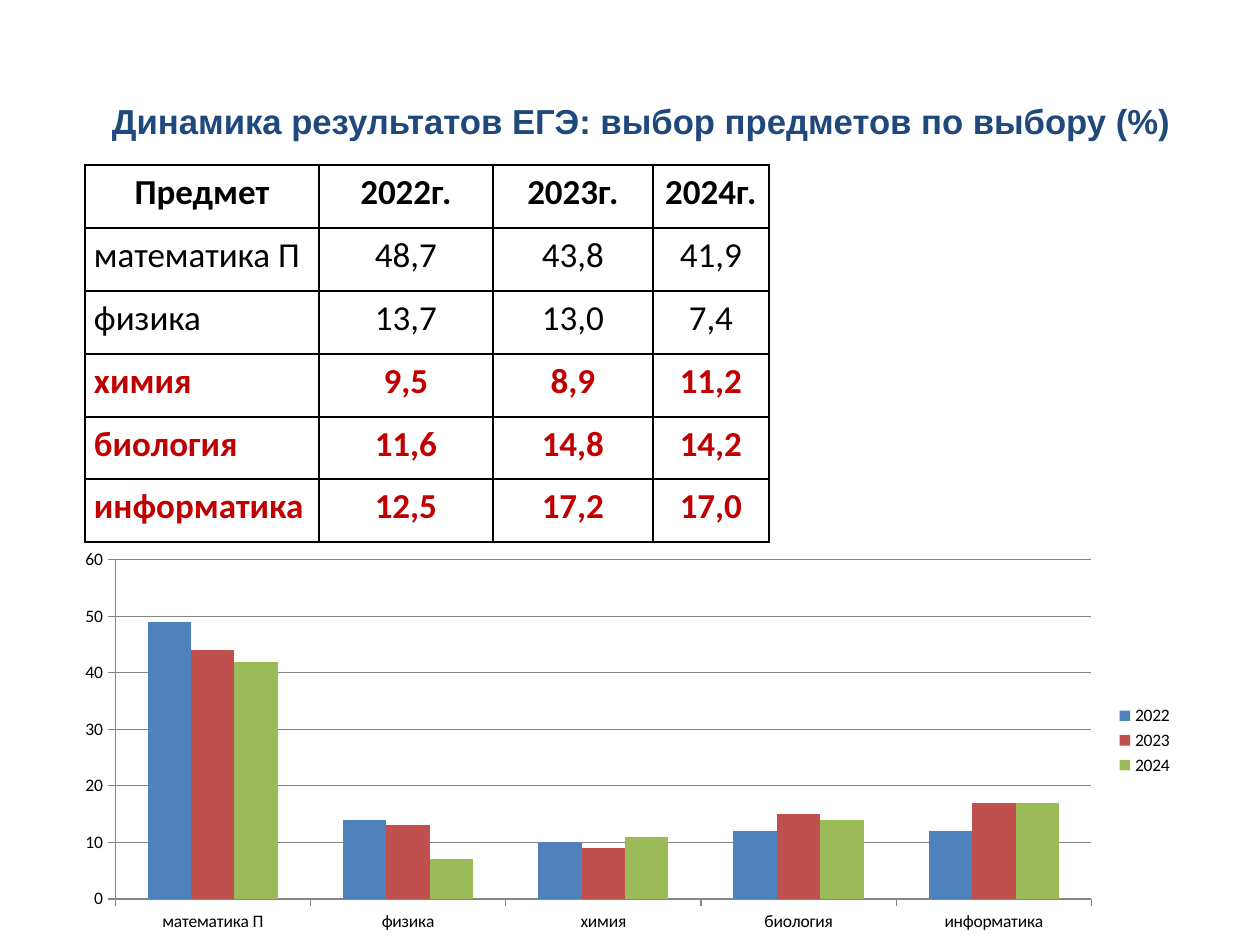
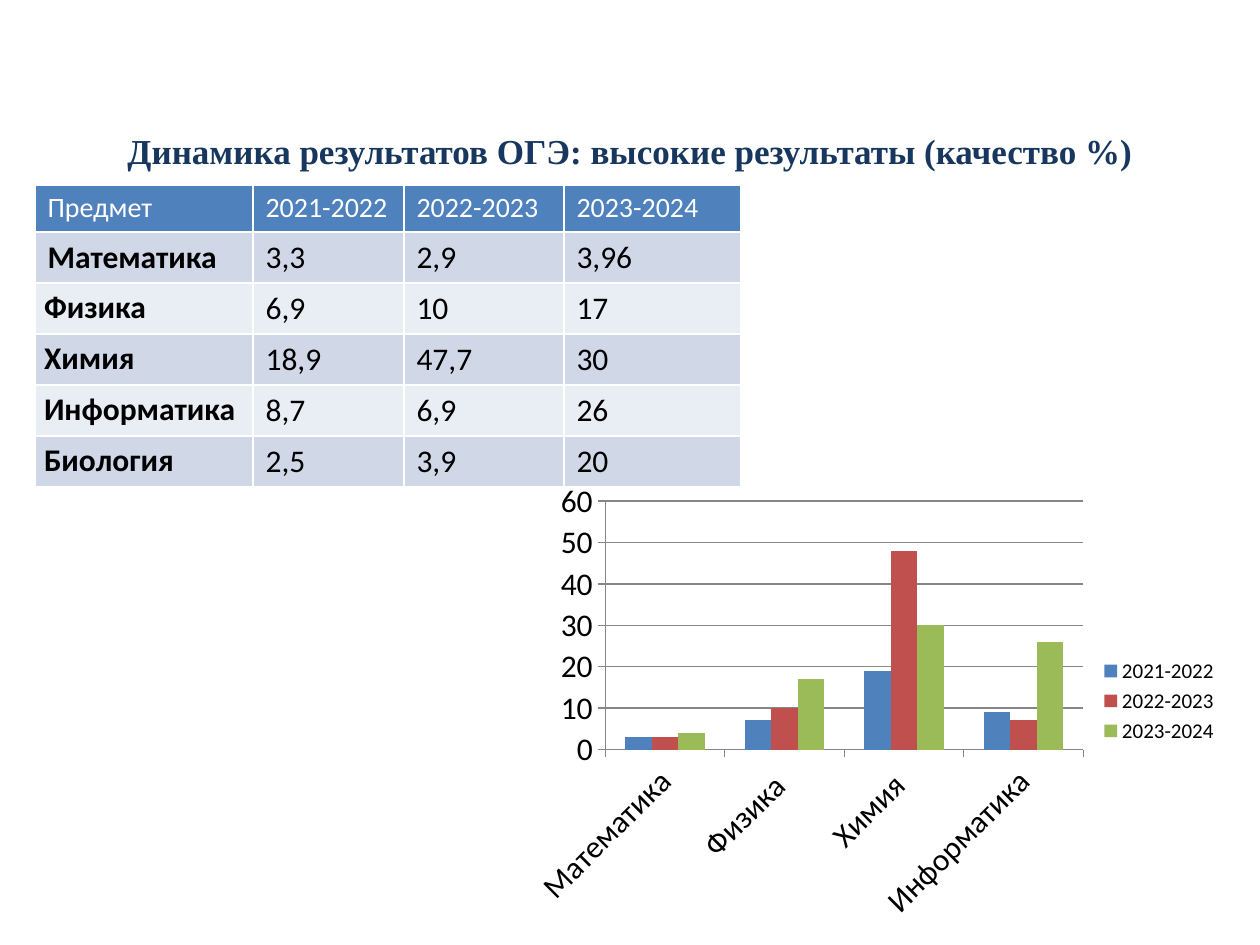
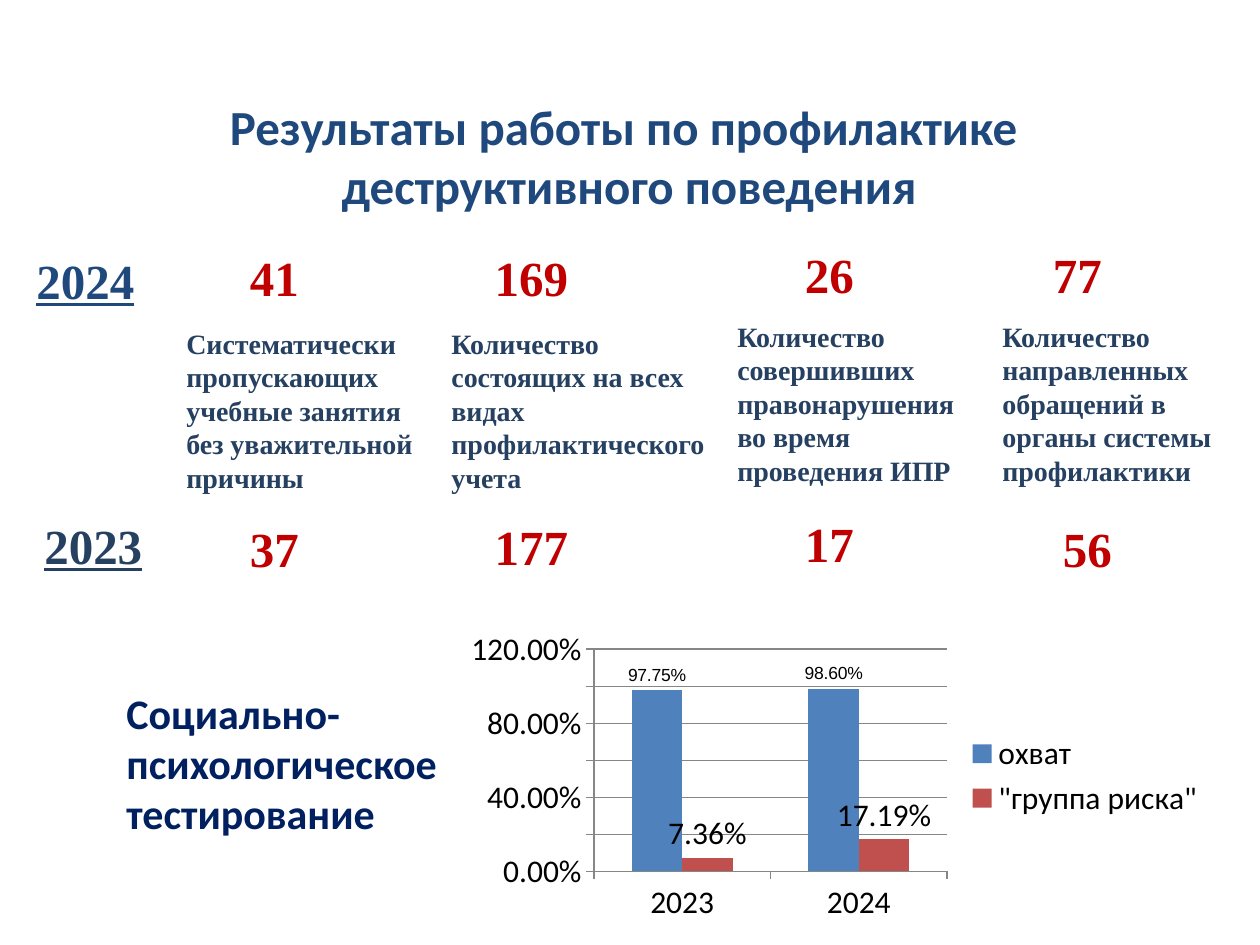
from lxml import etree
from pptx import Presentation
from pptx.chart.data import CategoryChartData
from pptx.dml.color import RGBColor
from pptx.enum.chart import XL_CHART_TYPE, XL_LABEL_POSITION, XL_LEGEND_POSITION, XL_TICK_MARK
from pptx.enum.text import MSO_ANCHOR, PP_ALIGN
from pptx.oxml.ns import qn
from pptx.util import Emu, Pt

CENTER, LEFT, JUSTIFY = PP_ALIGN.CENTER, PP_ALIGN.LEFT, PP_ALIGN.JUSTIFY
TOP, MIDDLE = MSO_ANCHOR.TOP, MSO_ANCHOR.MIDDLE
COLUMNS = XL_CHART_TYPE.COLUMN_CLUSTERED
TICK_OUTSIDE = XL_TICK_MARK.OUTSIDE
LEGEND_RIGHT = XL_LEGEND_POSITION.RIGHT
OUTSIDE_END = XL_LABEL_POSITION.OUTSIDE_END

SANS, SERIF, ARIAL = "Calibri", "Times New Roman", "Arial"
BLACK, WHITE = "000000", "FFFFFF"
BLUE, NAVY, DEEP_BLUE, INK = "1F497D", "254061", "17375E", "002060"
RED, GRID = "C00000", "868686"
HEADER_FILL, BAND_FILLS = "4F81BD", ("D0D8E8", "E9EDF4")
SERIES_COLORS = ("4F81BD", "C0504D", "9BBB59")
PX_PER_INCH = 126


def px(length):
    return Emu(round(length * 914400 / PX_PER_INCH))


def color(value):
    return RGBColor.from_string(value)


def style_font(font, name, size, text_color, bold=False):
    font.name, font.size, font.bold = name, Pt(size), bold
    font.color.rgb = color(text_color)


def add_text(slide, box, text, name, size, text_color, align=LEFT, anchor=TOP, underline=False):
    """Add bold text in a wrapping box."""
    text_frame = slide.shapes.add_textbox(*map(px, box)).text_frame
    text_frame.word_wrap = True
    text_frame.vertical_anchor = anchor
    text_frame.text = text
    for paragraph in text_frame.paragraphs:
        paragraph.alignment = align
        for run in paragraph.runs:
            style_font(run.font, name, size, text_color, True)
            run.font.underline = underline


def add_title(slide, box, text, name, size, text_color):
    add_text(slide, box, text, name, size, text_color, CENTER, MIDDLE)


# Tables
def border_cell(cell, line_color):
    properties = cell._tc.get_or_add_tcPr()
    for position, side in enumerate(("lnL", "lnR", "lnT", "lnB")):
        line = etree.Element(qn("a:" + side), w=str(Pt(1)))
        fill = etree.SubElement(line, qn("a:solidFill"))
        etree.SubElement(fill, qn("a:srgbClr"), val=line_color)
        properties.insert(position, line)


def add_grid(slide, left, top, widths, heights, rows, format_cell):
    """Add a table; format_cell styles each cell by its row and column."""
    table = slide.shapes.add_table(len(rows), len(widths), px(left), px(top),
                                   px(sum(widths)), px(sum(heights))).table
    for column, width in zip(table.columns, widths):
        column.width = px(width)
    for row, height in zip(table.rows, heights):
        row.height = px(height)
    for row_index, values in enumerate(rows):
        for column_index, value in enumerate(values):
            cell = table.cell(row_index, column_index)
            cell.text_frame.text = value
            format_cell(cell, row_index, column_index)


def fill_cell(cell, fill_color):
    cell.fill.solid()
    cell.fill.fore_color.rgb = color(fill_color)


def tighten_cell(cell, align):
    cell.margin_left = cell.margin_right = px(9)
    cell.margin_top = cell.margin_bottom = 0
    paragraph = cell.text_frame.paragraphs[0]
    paragraph.alignment = align
    paragraph.line_spacing = 1.15


def format_exam_cell(cell, row, column):
    highlighted = row >= 3
    tighten_cell(cell, LEFT if row and not column else CENTER)
    style_font(cell.text_frame.paragraphs[0].runs[0].font, SANS, 20,
               RED if highlighted else BLACK, row == 0 or highlighted)
    fill_cell(cell, WHITE)
    border_cell(cell, BLACK)


def format_quality_cell(cell, row, column):
    font = cell.text_frame.paragraphs[0].runs[0].font
    if row == 0:
        style_font(font, SANS, 16, WHITE)
        fill_cell(cell, HEADER_FILL)
    else:
        style_font(font, SANS, 18, BLACK, column == 0)
        fill_cell(cell, BAND_FILLS[(row - 1) % 2])
        if column == 0 and row > 1:
            tighten_cell(cell, JUSTIFY)
    border_cell(cell, WHITE)


# Charts
def add_column_chart(slide, box, categories, series, size, legend_size=None, number_format="General"):
    data = CategoryChartData(number_format=number_format)
    data.categories = categories
    for name, values in series:
        data.add_series(name, values)
    chart = slide.shapes.add_chart(COLUMNS, *map(px, box), data).chart
    style_font(chart.font, SANS, size, BLACK)
    chart.has_title = False
    chart.has_legend = True
    chart.legend.position = LEGEND_RIGHT
    chart.legend.include_in_layout = False
    style_font(chart.legend.font, SANS, legend_size or size, BLACK)
    plot = chart.plots[0]
    plot.vary_by_categories = False
    plot.gap_width = 150
    for chart_series, series_color in zip(plot.series, SERIES_COLORS):
        chart_series.format.fill.solid()
        chart_series.format.fill.fore_color.rgb = color(series_color)
    for axis in (chart.category_axis, chart.value_axis):
        axis.major_tick_mark = TICK_OUTSIDE
        axis.format.line.color.rgb = color(GRID)
    gridlines = chart.value_axis.major_gridlines
    gridlines.format.line.color.rgb = color(GRID)
    chart.value_axis.tick_labels.number_format = number_format
    chart.value_axis.tick_labels.number_format_is_linked = False
    return chart


def label_series(series, name, size):
    labels = series.data_labels
    labels.show_value = True
    labels.number_format = "0.00%"
    labels.number_format_is_linked = False
    labels.position = OUTSIDE_END
    style_font(labels.font, name, size, BLACK)


def series_from_rows(rows):
    """Turn table rows with decimal commas into categories and whole-number series."""
    categories = [row[0] for row in rows[1:]]
    series = [(rows[0][index].removesuffix("г."),
               [round(float(row[index].replace(",", "."))) for row in rows[1:]])
              for index in range(1, len(rows[0]))]
    return categories, series


# Slides
def build_exam_choice(slide):
    rows = [
        ("Предмет", "2022г.", "2023г.", "2024г."),
        ("математика П", "48,7", "43,8", "41,9"),
        ("физика", "13,7", "13,0", "7,4"),
        ("химия", "9,5", "8,9", "11,2"),
        ("биология", "11,6", "14,8", "14,2"),
        ("информатика", "12,5", "17,2", "17,0"),
    ]
    add_title(slide, (74, 94, 1134, 54),
              "Динамика результатов ЕГЭ: выбор предметов по выбору (%)", ARIAL, 19.8, BLUE)
    add_grid(slide, 85, 165, (234, 174, 160, 116), [63] * 4 + [62, 63], rows, format_exam_cell)
    add_column_chart(slide, (63, 542, 1123, 397), *series_from_rows(rows), 10)


def build_quality(slide):
    rows = [
        ("Предмет", "2021-2022", "2022-2023", "2023-2024"),
        ("Математика", "3,3", "2,9", "3,96"),
        ("Физика ", "6,9", "10", "17"),
        ("Химия ", "18,9", "47,7", "30"),
        ("Информатика", "8,7", "6,9", "26"),
        ("Биология", "2,5", "3,9", "20"),
    ]
    add_title(slide, (63, 106, 1134, 89),
              "Динамика результатов ОГЭ: высокие результаты (качество %)", SERIF, 20, DEEP_BLUE)
    add_grid(slide, 35, 185, (218, 151, 160, 177), [47] + [51] * 5, rows, format_quality_cell)
    # The chart leaves out the last subject
    chart = add_column_chart(slide, (520, 473, 711, 456), *series_from_rows(rows[:-1]), 18, 12)
    axis = chart.category_axis
    style_font(axis.tick_labels.font, SANS, 18, BLACK)
    axis._element.txPr.find(qn("a:bodyPr")).set("rot", "-2700000")


def add_indicator(slide, left, top, width, text, current, previous):
    """Add a description with the 2024 figure above it and the 2023 figure below."""
    add_text(slide, (left, top, width, 183), text, SERIF, 16, NAVY)
    for value, x, y in (current, previous):
        add_text(slide, (left + x, top + y, 141, 72), value, SERIF, 28, RED, CENTER)


def build_prevention(slide):
    add_title(slide, (38, 96, 1182, 118),
              "Результаты работы по профилактике \vдеструктивного поведения", SANS, 28, BLUE)
    # Years
    add_text(slide, (24, 244, 132, 81), "2024", SERIF, 28, BLUE, JUSTIFY, underline=True)
    add_text(slide, (32, 509, 141, 72), "2023", SERIF, 28, NAVY, JUSTIFY, underline=True)
    # Indicators: left, top, width, text, then value and offset for each year
    indicators = [
        (174, 320, 266, "Систематически пропускающих учебные занятия без уважительной причины",
         ("41", 30, -79), ("37", 30, 192)),
        (439, 320, 286, "Количество состоящих на всех видах профилактического учета",
         ("169", 22, -79), ("177", 22, 190)),
        (725, 313, 266, "Количество совершивших правонарушения во время проведения ИПР",
         ("26", 34, -75), ("17", 34, 194)),
        (990, 313, 266, "Количество направленных обращений в органы системы профилактики",
         ("77", 17, -75), ("56", 27, 199)),
    ]
    for indicator in indicators:
        add_indicator(slide, *indicator)
    # Testing
    add_text(slide, (114, 681, 362, 165), "Социально-психологическое\nтестирование", SANS, 24, INK)
    chart = add_column_chart(slide, (456, 624, 762, 304), ("2023", "2024"),
                             [("охват", (0.9775, 0.986)), ('"группа риска"', (0.0736, 0.1719))],
                             18, number_format="0.00%")
    coverage, risk_group = chart.plots[0].series
    label_series(coverage, ARIAL, 10)
    label_series(risk_group, SANS, 18)


def main():
    presentation = Presentation()
    presentation.slide_width, presentation.slide_height = px(1260), px(945)
    blank_layout = presentation.slide_layouts[6]
    for build in (build_exam_choice, build_quality, build_prevention):
        build(presentation.slides.add_slide(blank_layout))
    presentation.save("out.pptx")


if __name__ == "__main__":
    main()
